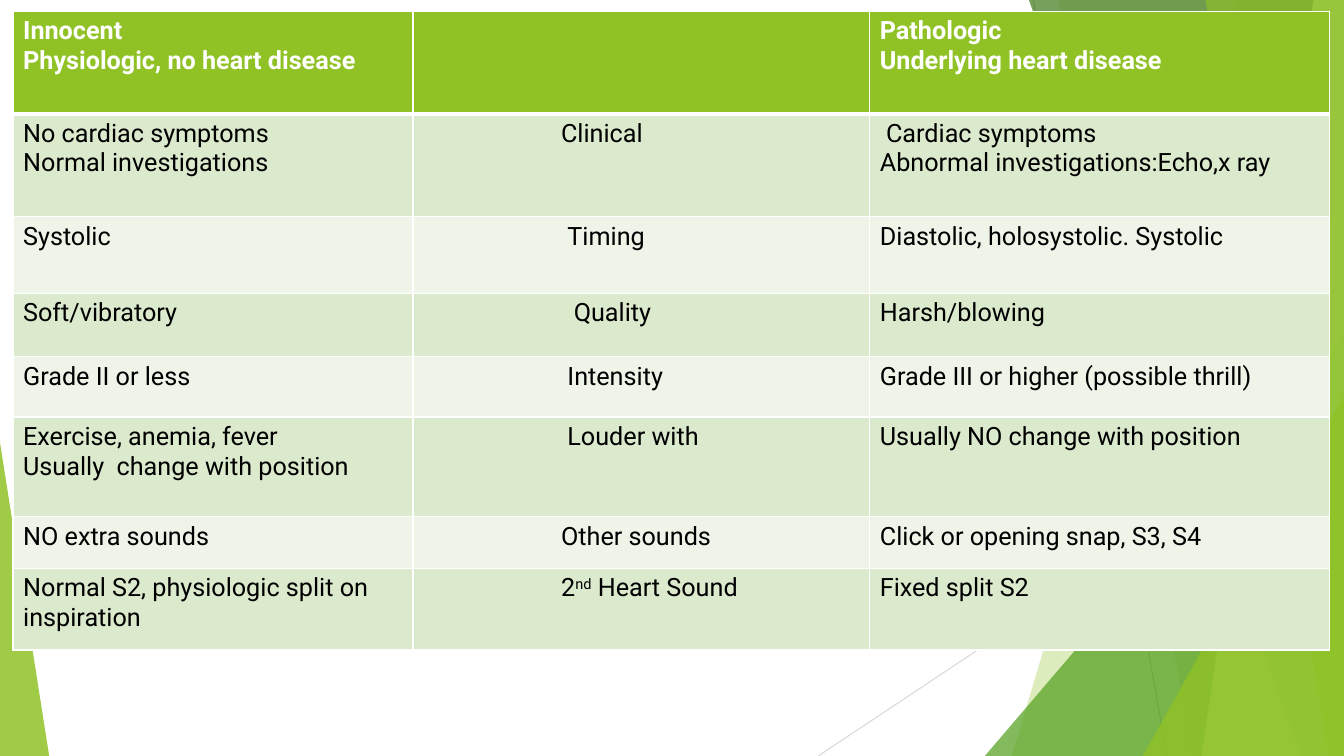
from dataclasses import dataclass

from lxml.etree import SubElement
from pptx import Presentation
from pptx.dml.color import RGBColor
from pptx.enum.shapes import MSO_CONNECTOR as Connector, MSO_SHAPE as Preset
from pptx.oxml.ns import qn
from pptx.util import Cm, Pt


@dataclass(frozen=True)
class Theme:
    lime: str = "90C226"
    green: str = "54A021"
    forest: str = "3F7819"
    pale_lime: str = "C0E474"
    dark_rule: str = "BFBFBF"
    light_rule: str = "D9D9D9"
    band_dark: str = "DBE9CD"
    band_light: str = "EEF4E8"
    white: str = "FFFFFF"
    black: str = "000000"
    font: str = "Roboto"
    text_size: int = 18


@dataclass(frozen=True)
class Box:
    left: float
    top: float
    width: float
    height: float

    @property
    def right(self):
        return self.left + self.width

    @property
    def bottom(self):
        return self.top + self.height


THEME = Theme()
PAGE = Box(0, 0, 33.87, 19.05)
TABLE = Box(0.33, 0.28, 33.17, 16.1)

COLUMN_WIDTHS = [10.08, 11.51, 11.58]
ROW_HEIGHTS = [2.59, 2.59, 1.93, 1.6, 1.52, 2.51, 1.3, 2.06]
ROWS = [
    ("Innocent\nPhysiologic, no heart disease", "", "Pathologic\nUnderlying heart disease"),
    ("No cardiac symptoms\nNormal investigations", "Clinical",
     " Cardiac symptoms\nAbnormal investigations:Echo,x ray"),
    ("Systolic", "Timing", "Diastolic, holosystolic. Systolic"),
    ("Soft/vibratory", "Quality", "Harsh/blowing"),
    ("Grade II or less", "Intensity", "Grade III or higher (possible thrill)"),
    ("Exercise, anemia, fever\nUsually  change with position", "Louder with",
     "Usually NO change with position"),
    ("NO extra sounds", "Other sounds", "Click or opening snap, S3, S4"),
    ("Normal S2, physiologic split on inspiration", "", "Fixed split S2"),
]
HEART_SOUND = [("2", 0), ("nd", 30000), (" Heart Sound", 0)]

# Left margin of the middle labels, and the extra steps in each row
LABEL_MARGIN, LABEL_STEP = 3.73, 0.16
LABEL_STEPS = [0, 0, 1, 2, 1, 1, 0, 0]


def paint(shape, color, opacity):
    shape.shadow.inherit = False
    shape.line.fill.background()
    shape.fill.solid()
    shape.fill.fore_color.rgb = RGBColor.from_string(color)
    color_node = shape.fill._xPr.find(".//" + qn("a:srgbClr"))
    SubElement(color_node, qn("a:alpha")).set("val", str(opacity * 1000))


def add_rule(page, start, end, color):
    rule = page.shapes.add_connector(Connector.STRAIGHT, *map(Cm, start + end))
    rule.line.color.rgb = RGBColor.from_string(color)
    rule.line.width = Pt(0.75)
    SubElement(rule._element.spPr, qn("a:effectLst"))


def add_band(page, box, top_x, bottom_x, color, opacity):
    """Fill from a slanted left side to the right edge of the box."""
    builder = page.shapes.build_freeform(Cm(top_x), Cm(box.top))
    corners = [(box.right, box.top), (box.right, box.bottom), (bottom_x, box.bottom)]
    builder.add_line_segments([(Cm(x), Cm(y)) for x, y in corners], close=True)
    paint(builder.convert_to_shape(), color, opacity)


def add_triangle(page, box, apex, color, opacity):
    triangle = page.shapes.add_shape(
        Preset.ISOSCELES_TRIANGLE, Cm(box.left), Cm(box.top), Cm(box.width), Cm(box.height))
    triangle.adjustments[0] = apex
    paint(triangle, color, opacity)


def corner_box(box, left, top):
    return Box(left, top, box.right - left, box.bottom - top)


def add_backdrop(page, box):
    # Thin crossing rules
    add_rule(page, (26.04, box.top), (29.41, box.bottom), THEME.dark_rule)
    add_rule(page, (box.right, 10.24), (20.62, box.bottom), THEME.light_rule)
    # Overlapping facets on the right, from back to front
    add_band(page, box, 31.19, 25.5, THEME.lime, 30)
    add_band(page, box, 26.67, 30.05, THEME.lime, 20)
    add_triangle(page, corner_box(box, 24.82, 8.46), 1, THEME.green, 72)
    add_band(page, box, 25.93, 32.79, THEME.forest, 70)
    add_band(page, box, 33.1, 30.28, THEME.pale_lime, 70)
    add_band(page, box, 30.38, 33.48, THEME.lime, 65)
    add_triangle(page, corner_box(box, 28.8, 9.98), 1, THEME.lime, 80)
    # Facet on the left
    add_triangle(page, Box(box.left, 11.15, 1.24, box.bottom - 11.15), 0, THEME.lime, 85)


def set_borders(cell, row):
    widths = {"lnL": 1, "lnR": 1, "lnT": 3 if row == 1 else 1, "lnB": 3 if row == 0 else 1}
    for side, width in widths.items():
        border = SubElement(cell._tc.get_or_add_tcPr(), qn("a:" + side), w=str(Pt(width)))
        fill = SubElement(border, qn("a:solidFill"))
        SubElement(fill, qn("a:srgbClr"), val=THEME.white)


def style_cell(cell, row):
    is_header = row == 0
    set_borders(cell, row)
    band = THEME.band_dark if row % 2 else THEME.band_light
    cell.fill.solid()
    cell.fill.fore_color.rgb = RGBColor.from_string(THEME.lime if is_header else band)
    for para in cell.text_frame.paragraphs:
        for span in para.runs:
            span.font.name = THEME.font
            span.font.size = Pt(THEME.text_size)
            span.font.bold = is_header
            span.font.color.rgb = RGBColor.from_string(THEME.white if is_header else THEME.black)


def add_heart_sound(cell):
    para = cell.text_frame.paragraphs[0]
    for text, baseline in HEART_SOUND:
        span = para.add_run()
        span.text = text
        if baseline:
            span._r.get_or_add_rPr().set("baseline", str(baseline))


def add_murmur_table(page, box):
    frame = page.shapes.add_table(
        len(ROWS), len(COLUMN_WIDTHS), Cm(box.left), Cm(box.top), Cm(box.width), Cm(box.height))
    table = frame.table
    for column, width in zip(table.columns, COLUMN_WIDTHS):
        column.width = Cm(width)
    for table_row, height in zip(table.rows, ROW_HEIGHTS):
        table_row.height = Cm(height)
    for row, texts in enumerate(ROWS):
        for column, text in enumerate(texts):
            table.cell(row, column).text_frame.text = text
        table.cell(row, 1).margin_left = Cm(LABEL_MARGIN + LABEL_STEP * LABEL_STEPS[row])
    add_heart_sound(table.cell(len(ROWS) - 1, 1))
    for row in range(len(ROWS)):
        for column in range(len(COLUMN_WIDTHS)):
            style_cell(table.cell(row, column), row)


def main():
    deck = Presentation()
    deck.slide_width, deck.slide_height = Cm(PAGE.width), Cm(PAGE.height)
    page = deck.slides.add_slide(deck.slide_layouts[6])
    add_backdrop(page, PAGE)
    add_murmur_table(page, TABLE)
    deck.save("out.pptx")


if __name__ == "__main__":
    main()
